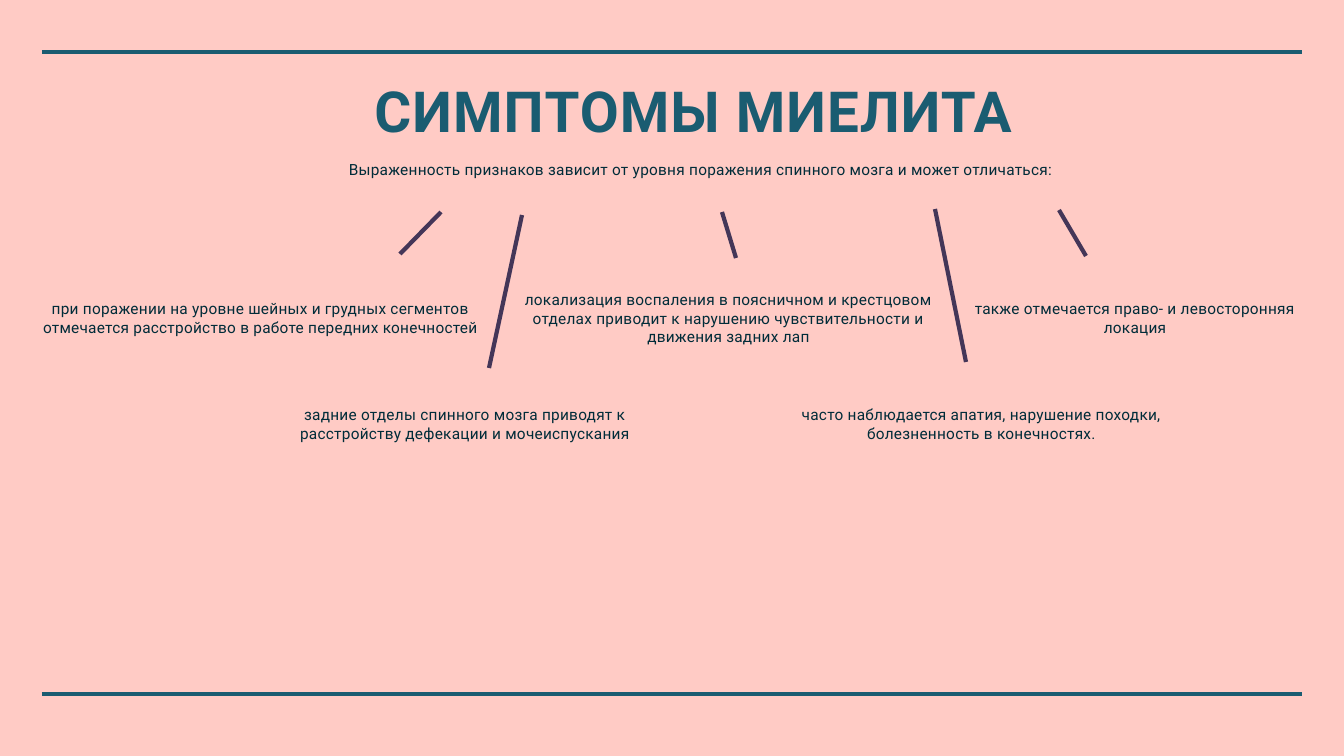
"""Builds the slide on the symptoms of myelitis."""
from lxml import etree
from pptx import Presentation
from pptx import util as u
from pptx.dml.color import RGBColor
from pptx.enum import shapes, text
from pptx.oxml.ns import qn

PX = 18143
WIDTH, HEIGHT = 1344, 756
FONT = "Roboto"
PINK, TEAL, INK, PLUM = "FFCBC5", "1A5C71", "002C39", "443658"

TITLE = "СИМПТОМЫ МИЕЛИТА "
INTRO = "Выраженность признаков зависит от уровня поражения спинного мозга и может отличаться:"
UPPER_MIDDLE, LOWER_MIDDLE = 318, 424
SYMPTOMS = [
    ("при поражении на уровне шейных и грудных сегментов отмечается "
     "расстройство в работе передних конечностей", 33, UPPER_MIDDLE, 455, 69),
    ("локализация воспаления в поясничном и крестцовом отделах приводит "
     "к нарушению чувствительности и движения задних лап", 497, UPPER_MIDDLE, 463, 69),
    ("также отмечается право- и левосторонняя локация", 946, UPPER_MIDDLE, 378, 69),
    ("задние отделы спинного мозга приводят к расстройству дефекации "
     "и мочеиспускания", 261, LOWER_MIDDLE, 408, 47),
    ("часто наблюдается апатия, нарушение походки, болезненность "
     "в конечностях.", 742, LOWER_MIDDLE, 479, 69),
]
POINTERS = [
    (400, 254, 441, 212),
    (736, 258, 722, 212),
    (1086, 256, 1059, 210),
    (489, 368, 522, 215),
    (966, 362, 935, 209),
]
MARGIN = 42
RULE_HEIGHTS = [52, 694]


def px(*lengths):
    return [u.Emu(round(length * PX)) for length in lengths]


def colour(value):
    return RGBColor.from_string(value)


def write(box, words, size=22, ink=INK, bold=False, tracking=40, spacing=1.0,
          wrap=True, fit=text.MSO_AUTO_SIZE.SHAPE_TO_FIT_TEXT):
    frame = box.text_frame
    frame.word_wrap = wrap
    frame.auto_size = fit
    frame.vertical_anchor = text.MSO_ANCHOR.MIDDLE
    inset = u.Inches(0.06)
    frame.margin_left = frame.margin_right = inset
    frame.margin_top = frame.margin_bottom = inset
    para = frame.paragraphs[0]
    para.alignment = text.PP_ALIGN.CENTER
    para.line_spacing = spacing
    span = para.add_run()
    span.text = words
    span.font.name = FONT
    span.font.size = u.Pt(size)
    span.font.bold = bold
    span.font.color.rgb = colour(ink)
    span.font._element.set("spc", str(tracking))


def draw_line(page, ends, ink):
    line = page.shapes.add_connector(shapes.MSO_CONNECTOR.STRAIGHT, *px(*ends))
    line.line.color.rgb = colour(ink)
    line.line.width = u.Pt(6)
    etree.SubElement(line._element.spPr, qn("a:effectLst"))


def main():
    deck = Presentation()
    deck.slide_width, deck.slide_height = px(WIDTH, HEIGHT)
    page = deck.slides.add_slide(deck.slide_layouts[5])
    page.background.fill.solid()
    page.background.fill.fore_color.rgb = colour(PINK)

    for y in RULE_HEIGHTS:
        draw_line(page, (MARGIN, y, WIDTH - MARGIN, y), TEAL)

    title = page.shapes.title
    title.left, title.top, title.width, title.height = px(144, 73, 1114, 83)
    write(title, TITLE, size=80.8, ink=TEAL, bold=True, tracking=160,
          spacing=0.9, fit=text.MSO_AUTO_SIZE.NONE)

    intro = page.shapes.add_textbox(*px(336, 156, 730, 27))
    write(intro, INTRO, wrap=False)

    for words, left, middle, width, height in SYMPTOMS:
        box = page.shapes.add_textbox(*px(left, middle - height / 2, width, height))
        write(box, words)

    for ends in POINTERS:
        draw_line(page, ends, PLUM)

    deck.save("out.pptx")


if __name__ == "__main__":
    main()
